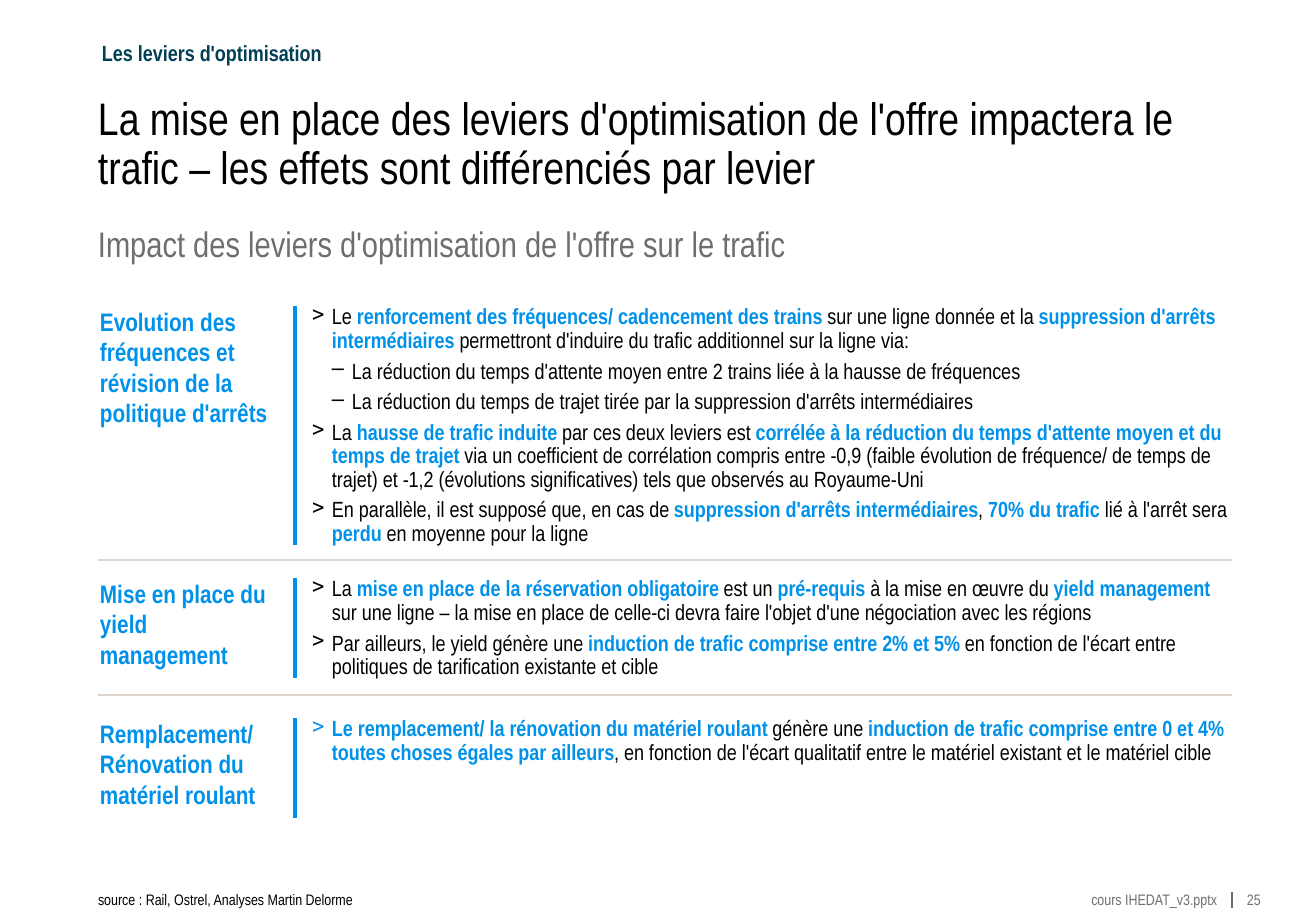
"""Build the slide on how each optimisation lever affects rail traffic."""
import pptx
import pptx.dml.color
import pptx.enum.shapes
import pptx.enum.text
import pptx.util
from lxml import etree

PX = 914400 / 121.5
BLACK, BLUE, NAVY, GREY, BEIGE = "000000", "0091EA", "003F56", "716D6D", "DFD6CF"
LEFT, RIGHT = 98, 1232
BAR_X, BODY_X, LABEL_X = 295, 312, 100
INDENT = 20

presentation = pptx.Presentation()
presentation.slide_width = round(1316 * PX)
presentation.slide_height = round(911 * PX)
slide = presentation.slides.add_slide(presentation.slide_layouts[6])


def add_text(box, paragraphs, size, color, bold=False, spacing=0.9, wrap=True, align="LEFT", anchor="TOP"):
    """Write (level, text) paragraphs; asterisks enclose bold blue words."""
    frame = slide.shapes.add_textbox(*[round(value * PX) for value in box]).text_frame
    frame.margin_left = frame.margin_top = frame.margin_right = frame.margin_bottom = 0
    frame.word_wrap = wrap
    frame.vertical_anchor = pptx.enum.text.MSO_ANCHOR[anchor]
    for index, (level, text) in enumerate(paragraphs):
        paragraph = frame.paragraphs[0] if index == 0 else frame.add_paragraph()
        paragraph.alignment = pptx.enum.text.PP_ALIGN[align]
        paragraph.line_spacing = spacing
        paragraph.space_before = pptx.util.Pt(4 if index else 0)
        if level:
            properties = paragraph._p.get_or_add_pPr()
            properties.set("marL", str(round(level * INDENT * PX)))
            properties.set("indent", str(round(-INDENT * PX)))
            bullet = etree.SubElement(properties, pptx.oxml.ns.qn("a:buChar"))
            bullet.set("char", ">" if level == 1 else "–")
        paragraph.font.name = "Arial Narrow"
        paragraph.font.size = pptx.util.Pt(size)
        paragraph.font.bold = bold
        paragraph.font.color.rgb = pptx.dml.color.RGBColor.from_string(color)
        for position, part in enumerate(text.split("*")):
            if part:
                run = paragraph.add_run()
                run.text = part
                if position % 2:
                    run.font.bold = True
                    run.font.color.rgb = pptx.dml.color.RGBColor.from_string(BLUE)


def add_line(start_x, start_y, end_x, end_y, color, width):
    """Draw a straight line without a shadow."""
    line = slide.shapes.add_connector(
        pptx.enum.shapes.MSO_CONNECTOR.STRAIGHT,
        *[round(value * PX) for value in (start_x, start_y, end_x, end_y)])
    line.line.color.rgb = pptx.dml.color.RGBColor.from_string(color)
    line.line.width = pptx.util.Pt(width)
    etree.SubElement(line._element.spPr, pptx.oxml.ns.qn("a:effectLst"))


add_text((102, 42, 221, 24), [(0, "Les leviers d'optimisation")], 13, NAVY, bold=True, wrap=False, anchor="MIDDLE")
add_text((LEFT, 96, 1135, 100), [(0, "La mise en place des leviers d'optimisation de l'offre impactera le "
                                     "trafic – les effets sont différenciés par levier")], 27, BLACK)
add_text((LEFT, 227, 1135, 39), [(0, "Impact des leviers d'optimisation de l'offre sur le trafic")], 21, GREY)

levers = [
    (306, 239, "Evolution des fréquences et révision de la politique d'arrêts", [
        (1, "Le *renforcement des fréquences/ cadencement des trains *sur une ligne donnée et la "
            "*suppression d'arrêts intermédiaires *permettront d'induire du trafic additionnel sur la ligne via:"),
        (2, "La réduction du temps d'attente moyen entre 2 trains liée à la hausse de fréquences"),
        (2, "La réduction du temps de trajet tirée par la suppression d'arrêts intermédiaires"),
        (1, "La *hausse de trafic induite *par ces deux leviers est *corrélée à la réduction du temps "
            "d'attente moyen et du temps de trajet *via un coefficient de corrélation compris entre -0,9 "
            "(faible évolution de fréquence/ de temps de trajet) et -1,2 (évolutions significatives) "
            "tels que observés au Royaume-Uni"),
        (1, "En parallèle, il est supposé que, en cas de *suppression d'arrêts intermédiaires*, "
            "*70% du trafic *lié à l'arrêt sera *perdu* en moyenne pour la ligne"),
    ]),
    (578, 100, "Mise en place du yield management", [
        (1, "La *mise en place de la réservation obligatoire *est un *pré-requis *à la mise en œuvre du "
            "*yield management *sur une ligne – la mise en place de celle-ci devra faire l'objet "
            "d'une négociation avec les régions"),
        (1, "Par ailleurs, le yield génère une *induction de trafic comprise entre 2% et 5% *en fonction "
            "de l'écart entre politiques de tarification existante et cible"),
    ]),
    (718, 100, "Remplacement/ Rénovation du matériel roulant", [
        (1, "*Le remplacement/ la rénovation du matériel roulant *génère une *induction de trafic comprise "
            "entre 0 et 4% toutes choses égales par ailleurs*, en fonction de l'écart qualitatif entre "
            "le matériel existant et le matériel cible"),
    ]),
]
for top, height, label, effects in levers:
    add_text((BODY_X, top, 921, height), effects, 13, BLACK)
    add_line(BAR_X, top, BAR_X, top + height, BLUE, 2.25)
    add_text((LABEL_X, top, 175, height), [(0, label)], 15, BLUE, bold=True, spacing=1.0)

for separator_y in (560, 695):
    add_line(LEFT, separator_y, RIGHT, separator_y, BEIGE, 0.75)

add_text((LEFT, 892, 266, 17), [(0, "source : Rail, Ostrel, Analyses Martin Delorme")], 9, BLACK,
         wrap=False, anchor="BOTTOM")
add_text((1088, 892, 129, 17), [(0, "cours IHEDAT_v3.pptx")], 9, GREY, wrap=False, align="RIGHT")
add_line(RIGHT, 892, RIGHT, 908, GREY, 0.75)
add_text((1247, 892, 16, 17), [(0, "25")], 9, GREY, wrap=False)

presentation.save("out.pptx")
